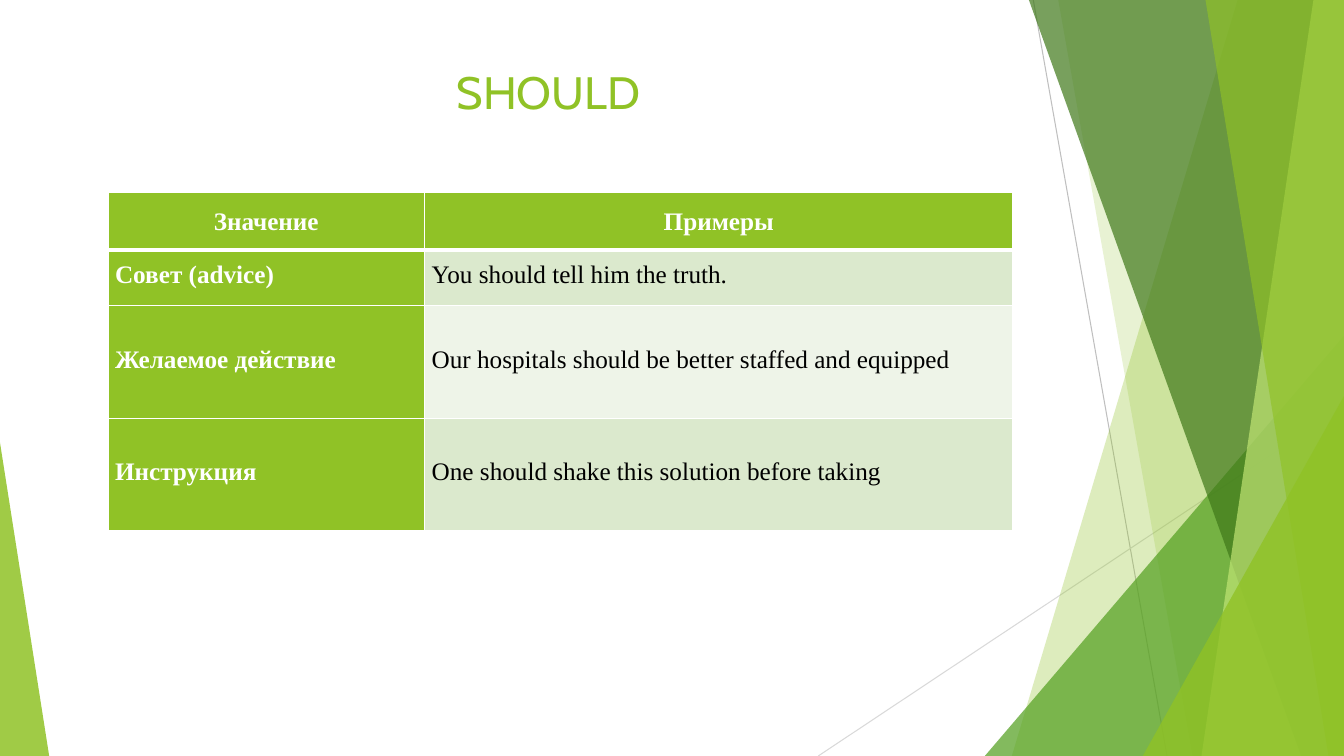
import dataclasses

import lxml.etree
import pptx
import pptx.dml.color
import pptx.enum.shapes
import pptx.enum.text
import pptx.oxml.ns
import pptx.util

Cm = pptx.util.Cm
Pt = pptx.util.Pt
qn = pptx.oxml.ns.qn
ALIGN = pptx.enum.text.PP_ALIGN
ANCHOR = pptx.enum.text.MSO_ANCHOR


@dataclasses.dataclass
class Theme:
    lime: str = "90C226"
    leaf: str = "54A021"
    moss: str = "3F7819"
    pale: str = "C0E474"
    band: str = "DBE9CD"
    mist: str = "EEF4E8"
    white: str = "FFFFFF"
    black: str = "000000"
    grey: str = "BFBFBF"
    light: str = "D9D9D9"
    head: str = "Cabin"
    body: str = "Times New Roman"
    large: float = 32.4
    small: float = 18


def rgb(code):
    return pptx.dml.color.RGBColor.from_string(code)


def write(frame, text, font, size, color, bold=False, align=ALIGN.LEFT,
          space=None, after=0, anchor=ANCHOR.MIDDLE):
    """Put one styled line of text in a frame."""
    frame.word_wrap = True
    frame.vertical_anchor = anchor
    para = frame.paragraphs[0]
    para.alignment = align
    para.line_spacing = space
    para.space_after = Pt(after)
    run = para.add_run()
    run.text = text
    run.font.name = font
    run.font.size = Pt(size)
    run.font.bold = bold
    run.font.color.rgb = rgb(color)


class Deck:
    wide, high = 33.87, 19.05

    def __init__(self, theme):
        self.theme = theme
        self.file = pptx.Presentation()
        self.file.slide_width = Cm(self.wide)
        self.file.slide_height = Cm(self.high)
        self.slide = self.file.slides.add_slide(self.file.slide_layouts[6])
        self.shapes = self.slide.shapes

    def line(self, start, end, color):
        kind = pptx.enum.shapes.MSO_CONNECTOR.STRAIGHT
        link = self.shapes.add_connector(kind, *map(Cm, start + end))
        link.line.color.rgb = rgb(color)
        link.line.width = Pt(0.75)
        lxml.etree.SubElement(link._element.spPr, qn("a:effectLst"))

    def tint(self, shape, color, alpha):
        shape.shadow.inherit = False
        shape.fill.solid()
        shape.fill.fore_color.rgb = rgb(color)
        tone = shape._element.spPr.find(".//" + qn("a:srgbClr"))
        lxml.etree.SubElement(tone, qn("a:alpha"), val=str(alpha * 1000))
        shape.line.fill.background()

    def shard(self, top, base, color, alpha):
        """Draw a sheet from a slanted left edge to the slide's right edge."""
        pen = self.shapes.build_freeform(Cm(top), 0)
        ends = [(self.wide, 0), (self.wide, self.high), (base, self.high)]
        pen.add_line_segments([(Cm(x), Cm(y)) for x, y in ends], close=True)
        self.tint(pen.convert_to_shape(), color, alpha)

    def wedge(self, left, top, width, tip, color, alpha):
        """Draw a triangle that stands on the slide's bottom edge."""
        kind = pptx.enum.shapes.MSO_SHAPE.ISOSCELES_TRIANGLE
        shape = self.shapes.add_shape(
            kind, Cm(left), Cm(top), Cm(width), Cm(self.high - top))
        shape.adjustments[0] = tip
        self.tint(shape, color, alpha)

    def title(self, text, left, top, width, height):
        box = self.shapes.add_textbox(*map(Cm, (left, top, width, height)))
        write(box.text_frame, text, self.theme.head, self.theme.large,
              self.theme.lime, align=ALIGN.CENTER, anchor=ANCHOR.TOP)

    def border(self, cell, row):
        thick = {"lnT": 3 if row == 1 else 1, "lnB": 3 if row == 0 else 1}
        props = cell._tc.get_or_add_tcPr()
        for spot, side in enumerate(("lnL", "lnR", "lnT", "lnB")):
            edge = lxml.etree.Element(
                qn("a:" + side), w=str(Pt(thick.get(side, 1))))
            fill = lxml.etree.SubElement(edge, qn("a:solidFill"))
            lxml.etree.SubElement(
                fill, qn("a:srgbClr"), val=self.theme.white)
            props.insert(spot, edge)

    def table(self, data, left, top, cols, rows):
        look = self.theme
        grid = self.shapes.add_table(
            len(rows), len(cols), Cm(left), Cm(top),
            Cm(sum(cols)), Cm(sum(rows))).table
        for col, width in zip(grid.columns, cols):
            col.width = Cm(width)
        for r, (height, line) in enumerate(zip(rows, data)):
            grid.rows[r].height = Cm(height)
            for c, text in enumerate(line):
                cell = grid.cell(r, c)
                strong = r == 0 or c == 0
                stripe = look.band if r % 2 else look.mist
                cell.fill.solid()
                cell.fill.fore_color.rgb = rgb(look.lime if strong else stripe)
                cell.margin_left = cell.margin_right = Cm(0.18)
                cell.margin_top = cell.margin_bottom = 0
                cell.vertical_anchor = ANCHOR.MIDDLE
                write(cell.text_frame, text, look.body, look.small,
                      look.white if strong else look.black, bold=strong,
                      align=ALIGN.LEFT if r else ALIGN.CENTER,
                      space=Pt(16.5) if r else 1.07,
                      after=6 if r else 0, anchor=None)
                self.border(cell, r)


def main():
    look = Theme()
    deck = Deck(look)

    # Thin lines and green sheets at the edges
    deck.line((26.04, 0), (29.41, deck.high), look.grey)
    deck.line((deck.wide, 10.24), (20.62, deck.high), look.light)
    deck.shard(31.19, 25.5, look.lime, 30)
    deck.shard(26.67, 30.05, look.lime, 20)
    deck.wedge(24.82, 8.46, 9.05, 1, look.leaf, 72)
    deck.shard(25.93, 32.79, look.moss, 70)
    deck.shard(33.1, 30.28, look.pale, 70)
    deck.shard(30.38, 33.48, look.lime, 65)
    deck.wedge(28.8, 9.98, 5.07, 1, look.lime, 80)
    deck.wedge(0, 11.15, 1.24, 0, look.lime, 85)

    # Title
    deck.title("SHOULD", 1.88, 1.5, 23.88, 1.24)

    # Meanings and examples
    data = [
        ("Значение", "Примеры"),
        ("Совет (advice)", "You should tell him the truth."),
        ("Желаемое действие",
         "Our hospitals should be better staffed and equipped"),
        ("Инструкция", "One should shake this solution before taking"),
    ]
    deck.table(data, 2.72, 4.85, (7.98, 14.83), (1.45, 1.4, 2.84, 2.84))

    deck.file.save("out.pptx")


if __name__ == "__main__":
    main()
